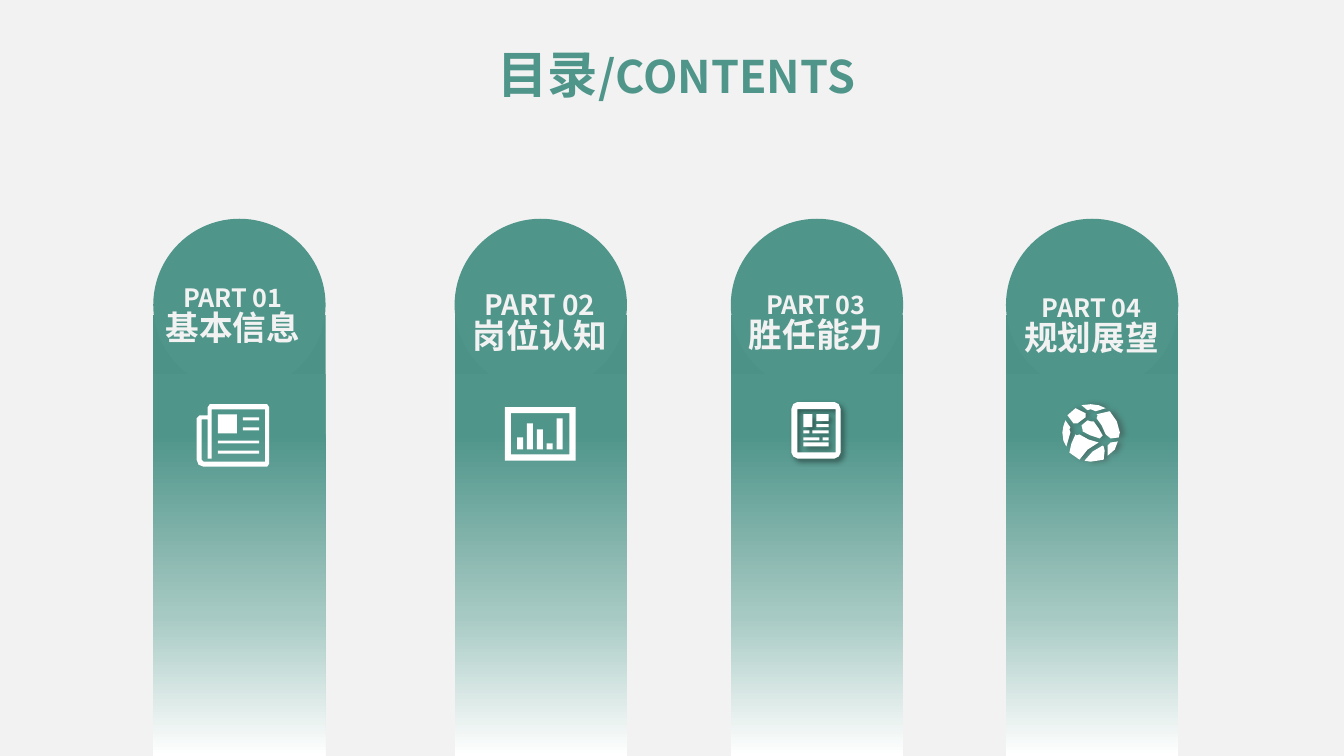
from lxml import etree
from pptx import Presentation
from pptx.dml.color import RGBColor
from pptx.enum.shapes import MSO_SHAPE
from pptx.enum.text import MSO_AUTO_SIZE, PP_ALIGN
from pptx.oxml.ns import qn
from pptx.util import Pt

RECT, OVAL = MSO_SHAPE.RECTANGLE, MSO_SHAPE.OVAL
CENTER = PP_ALIGN.CENTER
GROW = MSO_AUTO_SIZE.SHAPE_TO_FIT_TEXT
FONT = "Noto Sans CJK SC"
LINE_SPACING = 0.85

GREEN = RGBColor(0x4F, 0x95, 0x8A)
DEEP_GREEN = RGBColor(0x4D, 0x92, 0x87)
PALE_GREEN = RGBColor(0xA6, 0xC9, 0xC3)
WHITE = RGBColor(0xFF, 0xFF, 0xFF)
LIGHT = RGBColor(0xF2, 0xF2, 0xF2)
BLACK = RGBColor(0x00, 0x00, 0x00)
CHARCOAL = RGBColor(0x3B, 0x38, 0x38)
FADE = [(0, DEEP_GREEN), (27, GREEN), (68, PALE_GREEN), (100, WHITE)]

COLUMN_TOP, COLUMN_WIDTH, COLUMN_HEIGHT = 156.24, 123.12, 383.76
SHAFT_TOP = 68.4
LABEL_WIDTH, LABEL_HEIGHT = 168, 58.3
ICON_UNIT = 0.72  # points per step of the icon grid

# Icon outlines, in icon grid steps
NEWSPAPER = [
    [(70, 0), (13, 0), (11, 3), (11, 11), (3, 11), (0, 14), (0, 55), (2, 60),
     (7, 62), (70, 62), (72, 59), (72, 3)],
    [(68, 57), (7, 57), (5, 55), (5, 15), (11, 15), (11, 54), (15, 54), (15, 5), (68, 5)],
]
NEWS_BLOCKS = [(21, 10, 19, 19), (46, 13, 16, 3), (46, 23, 16, 3),
               (21, 36, 41, 3), (21, 46, 41, 3)]
BAR_HEIGHTS = [12, 26, 20, 6, 31]
TABLET = [(6, 0), (43, 0), (47, 2), (49, 7), (49, 50), (47, 54), (43, 56),
          (6, 56), (2, 54), (0, 50), (0, 7), (2, 2)]
TABLET_BLOCKS = [(6, 7, 38, 43), (12, 12, 9, 13), (25, 12, 12, 7), (25, 22, 12, 3),
                 (12, 28, 6, 3), (21, 28, 16, 3), (12, 35, 16, 3), (31, 35, 6, 3),
                 (12, 40, 25, 4)]
GLOBE = [
    [(14, 19), (15, 19), (23, 13), (23, 9), (13, 4), (5, 11), (11, 19)],
    [(7, 25), (8, 23), (3, 16), (1, 22), (0, 28), (1, 36), (4, 42), (6, 35), (8, 28)],
    [(28, 5), (33, 7), (43, 4), (36, 1), (28, 0), (19, 1), (25, 6)],
    [(37, 34), (40, 31), (36, 24), (31, 17), (28, 17), (25, 16), (19, 21), (20, 25),
     (20, 27), (28, 31)],
    [(45, 41), (45, 51), (51.5, 45), (55, 37), (48, 38)],
    [(36, 38), (26.5, 35), (17, 30), (14, 31), (13, 30), (9, 39), (7, 48), (17, 55),
     (25, 45)],
    [(47, 7), (34, 10), (35, 11), (34, 14), (39, 21), (43, 30), (48, 34), (56, 33),
     (57, 28), (54, 17)],
    [(40, 41), (29.5, 47), (22, 56), (28, 57), (35, 56.5), (41, 55), (42, 46), (41, 42)],
]


def style_run(run, size, color):
    run.font.size, run.font.bold, run.font.name = Pt(size), True, FONT
    run.font.color.rgb = color
    etree.SubElement(run.font._element, qn("a:ea"), typeface=FONT)


def add_text_frame(shapes, left, top, width, height):
    frame = shapes.add_textbox(Pt(left), Pt(top), Pt(width), Pt(height)).text_frame
    frame.word_wrap = True
    frame.auto_size = GROW
    return frame


def add_plain(shapes, kind, left, top, width, height, color):
    shape = shapes.add_shape(kind, Pt(left), Pt(top), Pt(width), Pt(height))
    shape.shadow.inherit = False
    shape.fill.solid()
    shape.fill.fore_color.rgb = color
    shape.line.fill.background()
    return shape


def add_color(parent, color):
    return etree.SubElement(parent, qn("a:srgbClr"), val=str(color))


def fade_down(shape):
    shape.fill.gradient()
    shape.fill.gradient_angle = 270
    stops = shape._element.spPr.find(qn("a:gradFill")).find(qn("a:gsLst"))
    for stop in list(stops):
        stops.remove(stop)
    for percent, color in FADE:
        add_color(etree.SubElement(stops, qn("a:gs"), pos=str(percent * 1000)), color)


def cast_shadow(shape, color, angle):
    effects = shape._element.spPr.find(qn("a:effectLst"))
    shadow = etree.SubElement(effects, qn("a:outerShdw"), blurRad=str(Pt(4)),
                              dist=str(Pt(3)), dir=str(angle * 60000), algn="ctr")
    etree.SubElement(add_color(shadow, color), qn("a:alpha"), val="40000")


def add_outline(shapes, left, top, contours):
    builder = shapes.build_freeform(*contours[0][0], scale=Pt(ICON_UNIT))
    builder.add_line_segments(contours[0][1:])
    for contour in contours[1:]:
        builder.move_to(*contour[0])
        builder.add_line_segments(contour[1:])
    outline = builder.convert_to_shape(Pt(left), Pt(top))
    outline.shadow.inherit = False
    outline.fill.solid()
    outline.fill.fore_color.rgb = WHITE
    outline.line.fill.background()
    return outline


def add_blocks(shapes, left, top, blocks):
    for x, y, width, height in blocks:
        add_plain(shapes, RECT, left + x * ICON_UNIT, top + y * ICON_UNIT,
                  width * ICON_UNIT, height * ICON_UNIT, WHITE)


def corners(x, y, width, height):
    return [(x, y), (x + width, y), (x + width, y + height), (x, y + height)]


def newspaper_icon(shapes, left, top):
    add_outline(shapes, left, top, NEWSPAPER)
    add_blocks(shapes, left, top, NEWS_BLOCKS)


def chart_icon(shapes, left, top):
    add_blocks(shapes, left, top, [(12 + 9.8 * i, 42 - height, 6, height)
                                   for i, height in enumerate(BAR_HEIGHTS)])
    add_outline(shapes, left, top, [corners(0, 0, 70, 53), corners(6, 6, 58, 41)])


def tablet_icon(shapes, left, top):
    contours = [TABLET] + [corners(*block) for block in TABLET_BLOCKS]
    cast_shadow(add_outline(shapes, left, top, contours), BLACK, 45)


def globe_icon(shapes, left, top):
    cast_shadow(add_outline(shapes, left, top, GLOBE), CHARCOAL, 0)


# Column left, part, its size, topic, label shift and top, icon and its offset
COLUMNS = [
    (109.44, "PART 01", 18, "基本信息", -4.7, 45.4, newspaper_icon, 31, 132.5),
    (324.72, "PART 02", 20, "岗位认知", -0.7, 49, chart_icon, 36, 134.6),
    (522, "PART 03", 18, "胜任能力", -0.7, 50.4, tablet_icon, 43.2, 131),
    (718.56, "PART 04", 18, "规划展望", -0.4, 52.6, globe_icon, 40.3, 132.5),
]


def add_title(slide, left, top, width, height):
    frame = add_text_frame(slide.shapes, left, top, width, height)
    line = frame.paragraphs[0]
    line.alignment = CENTER
    line.line_spacing = LINE_SPACING
    for text, size in (("目录", 36), ("/CONTENTS", 32)):
        run = line.add_run()
        run.text = text
        style_run(run, size, GREEN)


def add_column(slide, left, top, width, height, part, part_size, topic,
               label_shift, label_top, draw_icon, icon_x, icon_y):
    shapes = slide.shapes.add_group_shape().shapes
    # Fading shaft with a round head
    fade_down(add_plain(shapes, RECT, left, top + SHAFT_TOP, width,
                        height - SHAFT_TOP, GREEN))
    add_plain(shapes, OVAL, left, top, width, width, GREEN)
    # Label
    frame = add_text_frame(shapes, left + (width - LABEL_WIDTH) / 2 + label_shift,
                           top + label_top, LABEL_WIDTH, LABEL_HEIGHT)
    frame.text = f"{part}\n{topic}"
    for line, size in zip(frame.paragraphs, (part_size, 24)):
        line.alignment = CENTER
        line.line_spacing = LINE_SPACING
        style_run(line.runs[0], size, LIGHT)
    # Icon
    draw_icon(shapes, left + icon_x, top + icon_y)


def main():
    deck = Presentation()
    deck.slide_width, deck.slide_height = Pt(960), Pt(540)
    slide = deck.slides.add_slide(deck.slide_layouts[6])
    slide.background.fill.solid()
    slide.background.fill.fore_color.rgb = LIGHT
    add_title(slide, 347, 33.8, 272.2, 51.1)
    for left, *content in COLUMNS:
        add_column(slide, left, COLUMN_TOP, COLUMN_WIDTH, COLUMN_HEIGHT, *content)
    deck.save("out.pptx")


if __name__ == "__main__":
    main()
